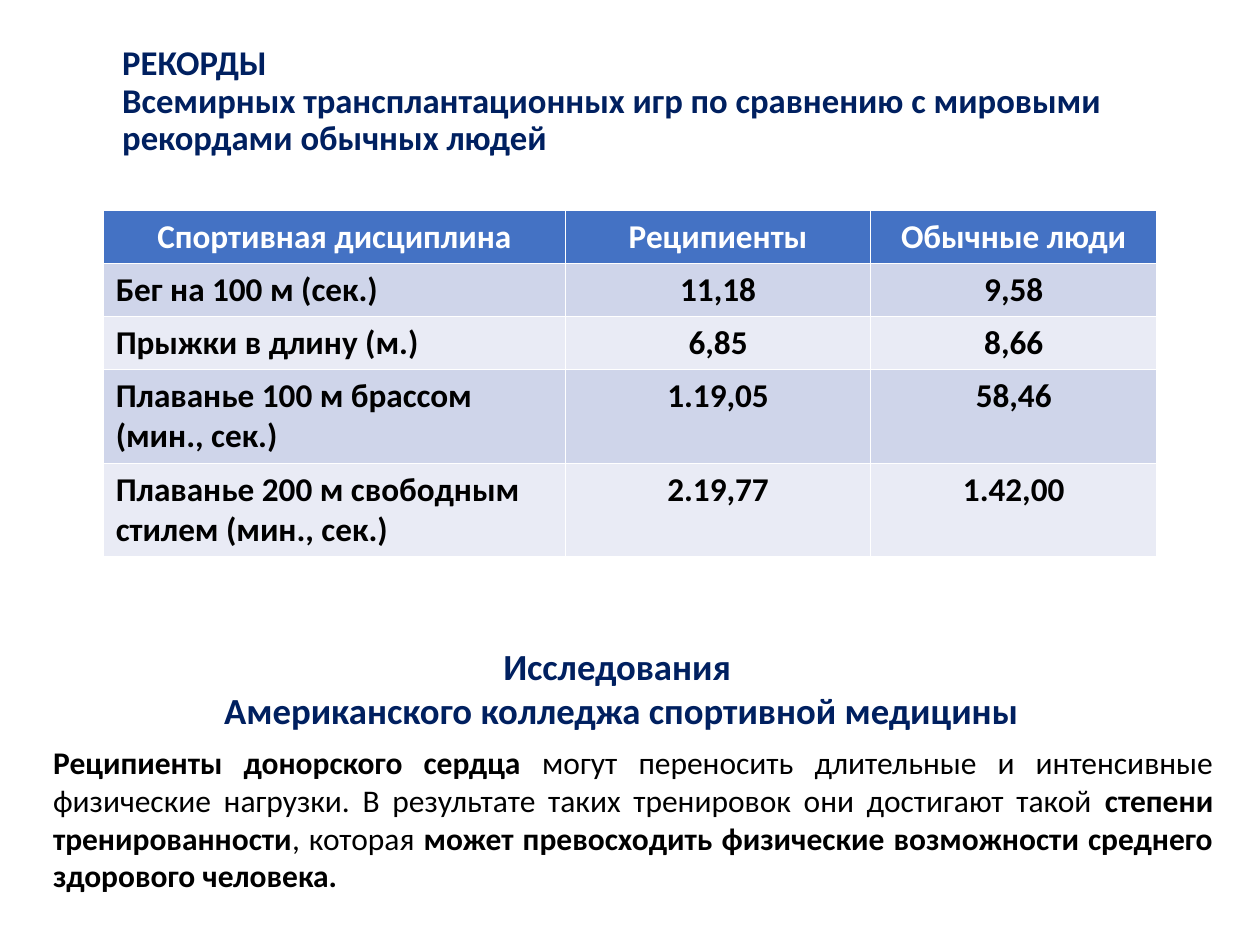
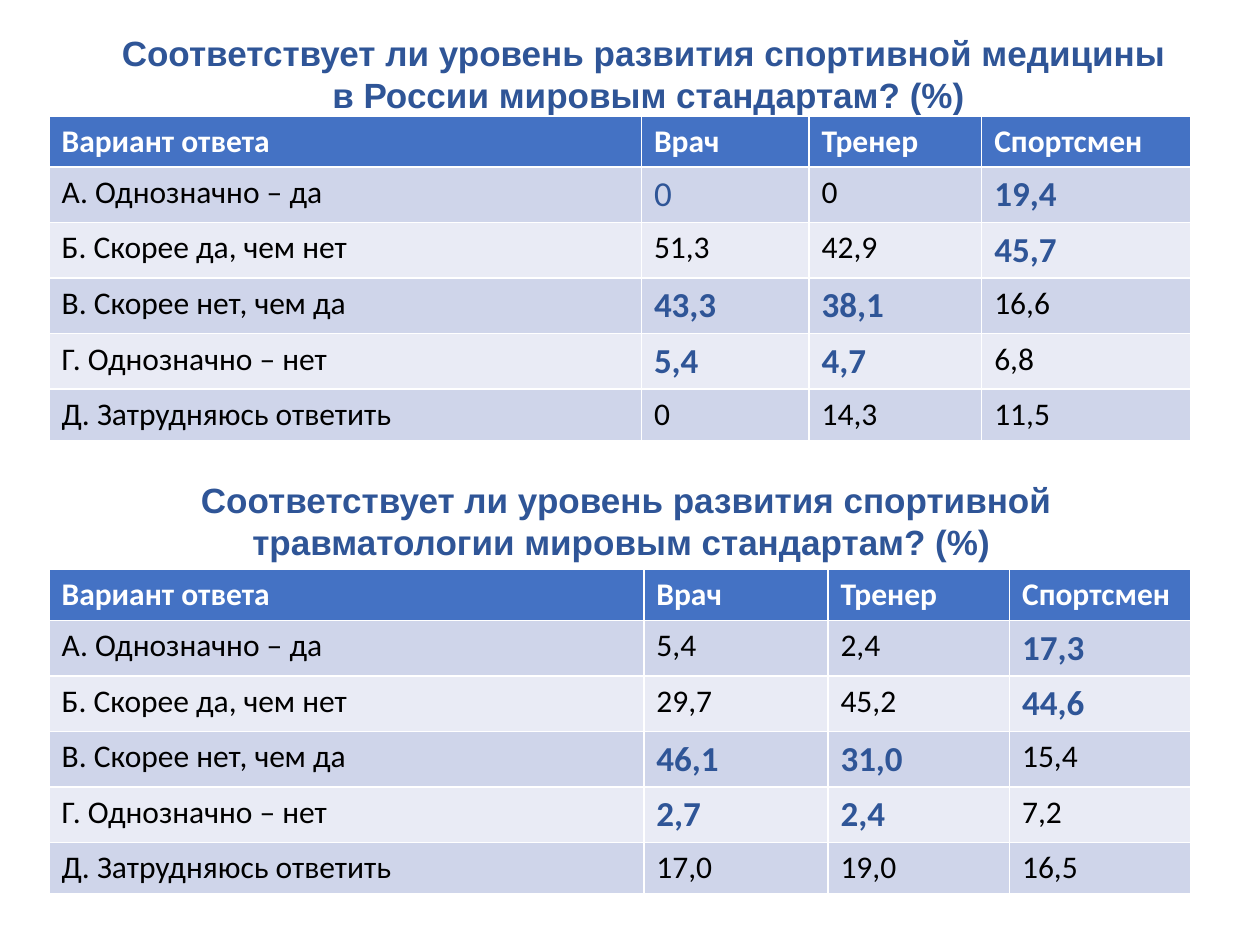
"""Builds two slides on sport after transplantation and on sports medicine surveys."""
from dataclasses import dataclass

from pptx import Presentation
from pptx.dml.color import RGBColor
from pptx.enum.text import MSO_ANCHOR, MSO_AUTO_SIZE, PP_ALIGN
from pptx.util import Cm, Pt

LEFT, CENTER, JUSTIFY = PP_ALIGN.LEFT, PP_ALIGN.CENTER, PP_ALIGN.JUSTIFY
MIDDLE, TOP = MSO_ANCHOR.MIDDLE, MSO_ANCHOR.TOP
NO_AUTOFIT = MSO_AUTO_SIZE.NONE


@dataclass(frozen=True)
class Theme:
    navy: str = "002060"
    blue: str = "2F5597"
    header: str = "4472C4"
    bands: tuple = ("E9EBF5", "CFD5EA")
    white: str = "FFFFFF"
    black: str = "000000"
    body_font: str = "Calibri"
    question_font: str = "Arial"
    title_size: float = 19.8
    heading_size: float = 21
    records_size: float = 19
    body_size: float = 18
    accent_size: float = 20


theme = Theme()


def format_paragraph(paragraph, size, color, bold=True, align=LEFT, font=theme.body_font):
    paragraph.alignment = align
    paragraph.font.name = font
    paragraph.font.size = Pt(size)
    paragraph.font.bold = bold
    paragraph.font.color.rgb = RGBColor.from_string(color)


def add_banded_table(slide, left, top, widths, heights, rows):
    table = slide.shapes.add_table(
        len(rows), len(widths), Cm(left), Cm(top), Cm(sum(widths)), Cm(sum(heights))
    ).table
    for column, width in zip(table.columns, widths):
        column.width = Cm(width)
    for number, (row, height) in enumerate(zip(rows, heights)):
        table.rows[number].height = Cm(height)
        for position, text in enumerate(row):
            cell = table.cell(number, position)
            cell.text = text
            cell.fill.solid()
            color = theme.bands[number % 2] if number else theme.header
            cell.fill.fore_color.rgb = RGBColor.from_string(color)
    return table


presentation = Presentation()
presentation.slide_width, presentation.slide_height = Cm(25.4), Cm(19.05)
title_only = presentation.slide_layouts[5]

records_slide = presentation.slides.add_slide(title_only)
title = records_slide.shapes.title
title.left, title.top, title.width, title.height = Cm(2.21), Cm(0), Cm(21.13), Cm(3.68)
frame = title.text_frame
frame.text = "РЕКОРДЫ \vВсемирных трансплантационных игр по сравнению с мировыми рекордами обычных людей"
frame.word_wrap, frame.auto_size, frame.vertical_anchor = True, NO_AUTOFIT, MIDDLE
frame.margin_top = Cm(0.56)
frame.paragraphs[0].line_spacing = 0.9
format_paragraph(frame.paragraphs[0], theme.title_size, theme.navy)

records = [
    ("Спортивная дисциплина", "Реципиенты", "Обычные люди"),
    ("Бег на 100 м (сек.)", "11,18", "9,58"),
    ("Прыжки в длину (м.)", "6,85", "8,66"),
    ("Плаванье 100 м брассом (мин., сек.)", "1.19,05", "58,46"),
    ("Плаванье 200 м свободным стилем (мин., сек.)", "2.19,77", "1.42,00"),
]
records_table = add_banded_table(
    records_slide, 2.08, 4.24, [9.32, 6.15, 5.77], [1.07] * 3 + [1.89] * 2, records
)
for number in range(len(records)):
    for position in range(3):
        format_paragraph(
            records_table.cell(number, position).text_frame.paragraphs[0],
            theme.records_size,
            theme.black if number else theme.white,
            align=LEFT if number and not position else CENTER,
        )

findings_box = records_slide.shapes.add_textbox(Cm(0.89), Cm(14.88), Cm(23.75), Cm(3.28))
heading_box = records_slide.shapes.add_textbox(Cm(0.89), Cm(12.88), Cm(23.27), Cm(1.98))
for shape in (findings_box, heading_box):
    frame = shape.text_frame
    frame.word_wrap = True
    frame.margin_left = frame.margin_right = Cm(0.18)
    frame.margin_top = frame.margin_bottom = Cm(0.1)

findings = [
    ("Реципиенты донорского сердца ", True),
    ("могут переносить длительные и интенсивные физические нагрузки. "
     "В результате таких тренировок они достигают такой ", False),
    ("степени тренированности", True),
    (", которая ", False),
    ("может превосходить физические возможности среднего здорового человека.", True),
]
paragraph = findings_box.text_frame.paragraphs[0]
format_paragraph(paragraph, theme.body_size, theme.black, bold=False, align=JUSTIFY)
for text, bold in findings:
    run = paragraph.add_run()
    run.text = text
    run.font.bold = bold

heading_box.text_frame.text = "Исследования \nАмериканского колледжа спортивной медицины"
for paragraph in heading_box.text_frame.paragraphs:
    format_paragraph(paragraph, theme.heading_size, theme.navy, align=CENTER)

survey_slide = presentation.slides.add_slide(title_only)
title = survey_slide.shapes.title
title.left, title.top, title.width, title.height = Cm(2.13), Cm(0.51), Cm(21.89), Cm(1.96)
traumatology_box = survey_slide.shapes.add_textbox(Cm(1.07), Cm(9.53), Cm(23.11), Cm(1.96))
questions = [
    (title, MIDDLE, False,
     "Соответствует ли уровень развития спортивной медицины \nв России мировым стандартам? (%)"),
    (traumatology_box, TOP, True,
     "Соответствует ли уровень развития спортивной травматологии мировым стандартам? (%) "),
]
for shape, anchor, wrap, text in questions:
    frame = shape.text_frame
    frame.text = text
    frame.word_wrap, frame.auto_size, frame.vertical_anchor = wrap, NO_AUTOFIT, anchor
    for paragraph in frame.paragraphs:
        format_paragraph(
            paragraph, theme.accent_size, theme.blue, align=CENTER, font=theme.question_font
        )

header = ("Вариант ответа", "Врач", "Тренер", "Спортсмен")
answers = [
    "А. Однозначно – да",
    "Б. Скорее да, чем нет",
    "В. Скорее нет, чем да",
    "Г. Однозначно – нет",
    "Д. Затрудняюсь ответить",
]
medicine_shares = [
    ("0", "0", "19,4"),
    ("51,3", "42,9", "45,7"),
    ("43,3", "38,1", "16,6"),
    ("5,4", "4,7", "6,8"),
    ("0", "14,3", "11,5"),
]
traumatology_shares = [
    ("5,4", "2,4", "17,3"),
    ("29,7", "45,2", "44,6"),
    ("46,1", "31,0", "15,4"),
    ("2,7", "2,4", "7,2"),
    ("17,0", "19,0", "16,5"),
]
bold_accents = {(1, 3), (2, 3), (3, 1), (3, 2), (4, 1), (4, 2)}
surveys = [
    (2.34, [11.94, 3.38, 3.48, 4.22], medicine_shares, {(1, 1)}),
    (11.48, [11.99, 3.71, 3.66, 3.66], traumatology_shares, set()),
]
for top, widths, shares, plain_accents in surveys:
    rows = [header] + [(answer, *values) for answer, values in zip(answers, shares)]
    survey_table = add_banded_table(
        survey_slide, 0.99, top, widths, [1.03] + [1.1] * 4 + [1.03], rows
    )
    for number in range(len(rows)):
        for position in range(len(header)):
            place = (number, position)
            accented = place in bold_accents | plain_accents
            color = theme.blue if accented else theme.black
            format_paragraph(
                survey_table.cell(number, position).text_frame.paragraphs[0],
                theme.accent_size if accented else theme.body_size,
                color if number else theme.white,
                bold=number == 0 or place in bold_accents,
            )

presentation.save("out.pptx")
